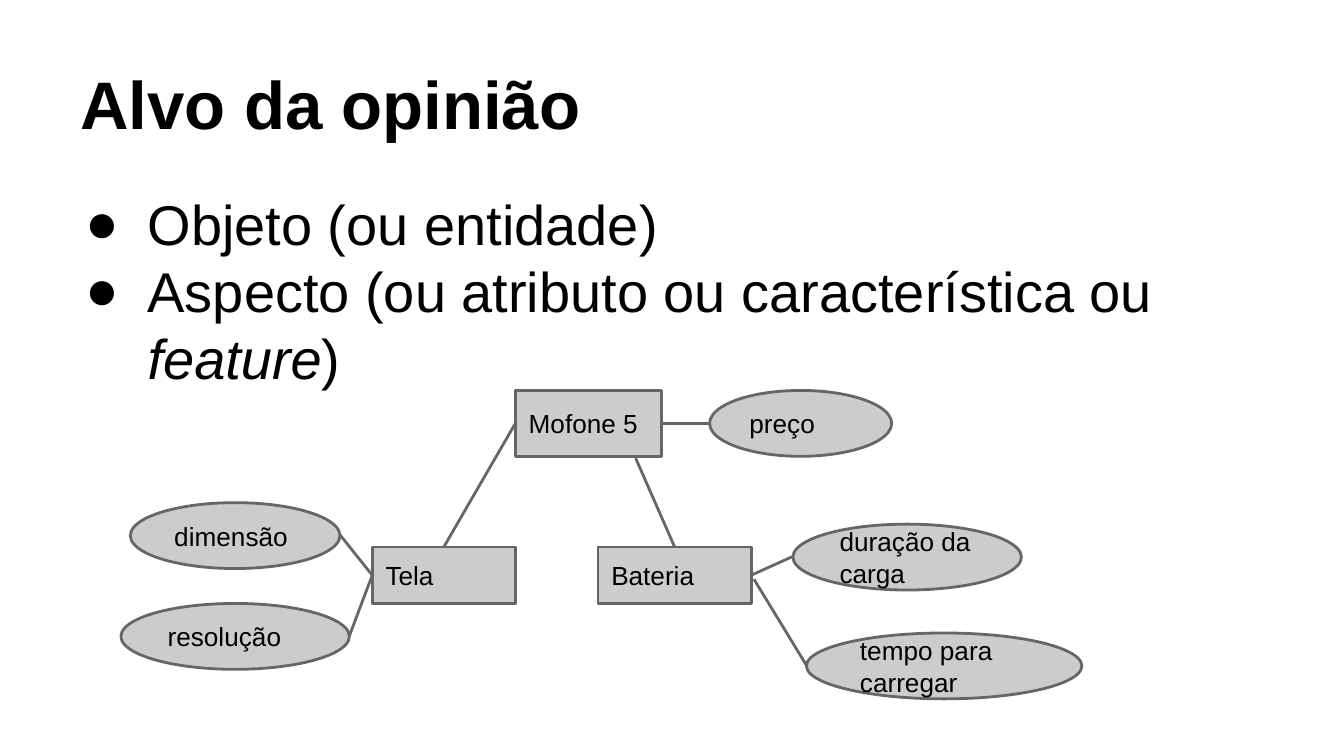
from lxml import etree
from pptx import Presentation
from pptx.dml.color import RGBColor
from pptx.enum import shapes, text
from pptx.oxml import ns
from pptx.util import Inches, Pt

theme = dict(font="Arial", ink="000000", fill="CCCCCC", edge="666666",
             title=36, body=30, node=14, stroke=1.5)

deck = Presentation()
deck.slide_width = Inches(10)
deck.slide_height = deck.slide_width * 9 // 16
slide = deck.slides.add_slide(deck.slide_layouts[6])
col, row = deck.slide_width / 100, deck.slide_height / 56.25


def grid(x, y):
    return round(x * col), round(y * row)


def write(frame, paragraphs, size, bold=False, anchor=text.MSO_ANCHOR.MIDDLE,
          bullet=None):
    frame.word_wrap = True
    frame.vertical_anchor = anchor
    frame.margin_left = frame.margin_right = round(col)
    frame.margin_top = frame.margin_bottom = round(row)
    for number, pieces in enumerate(paragraphs):
        paragraph = frame.add_paragraph() if number else frame.paragraphs[0]
        if bullet:
            props = paragraph._p.get_or_add_pPr()
            props.set("marL", str(round(5 * col)))
            props.set("indent", str(round(-4.6 * col)))
            color = etree.SubElement(props, ns.qn("a:buClr"))
            etree.SubElement(color, ns.qn("a:srgbClr"), val=theme["ink"])
            etree.SubElement(props, ns.qn("a:buFont"), typeface=theme["font"])
            etree.SubElement(props, ns.qn("a:buChar"), char=bullet)
        paragraph.alignment = text.PP_ALIGN.LEFT
        for words, italic in pieces:
            run = paragraph.add_run()
            run.text = words
            run.font.name, run.font.size = theme["font"], Pt(size)
            run.font.bold, run.font.italic = bold, italic
            run.font.color.rgb = RGBColor.from_string(theme["ink"])


heading = slide.shapes.add_textbox(*grid(5, 2.25), *grid(90, 9.4))
write(heading.text_frame, [[("Alvo da opinião", False)]], theme["title"],
      bold=True, anchor=text.MSO_ANCHOR.BOTTOM)

definitions = slide.shapes.add_textbox(*grid(5, 13.1), *grid(87.9, 40.7))
write(definitions.text_frame, [
    [("Objeto (ou entidade)", False)],
    [("Aspecto (ou atributo ou característica ou ", False),
     ("feature", True), (")", False)],
], theme["body"], anchor=text.MSO_ANCHOR.TOP, bullet="●")

box, oval = shapes.MSO_SHAPE.RECTANGLE, shapes.MSO_SHAPE.OVAL
concepts = {}
for label, kind, x, y, width, height in [
    ("Mofone 5", box, 38.35, 29.05, 10.9, 4.9),
    ("Tela", box, 27.7, 40.7, 10.65, 4.2),
    ("Bateria", box, 44.5, 40.7, 11.4, 4.2),
    ("dimensão", oval, 9.7, 37.4, 15.6, 4.9),
    ("resolução", oval, 9, 44.9, 17, 4.9),
    ("duração da carga", oval, 59, 39, 17, 4.9),
    ("tempo para carregar", oval, 60, 47.1, 20.5, 4.9),
    ("preço", oval, 52.8, 29.05, 13.55, 4.9),
]:
    concept = slide.shapes.add_shape(kind, *grid(x, y), *grid(width, height))
    concept.shadow.inherit = False
    concept.fill.solid()
    concept.fill.fore_color.rgb = RGBColor.from_string(theme["fill"])
    concept.line.color.rgb = RGBColor.from_string(theme["edge"])
    concept.line.width = Pt(theme["stroke"])
    write(concept.text_frame, [[(label, False)]], theme["node"])
    concepts[label] = concept

for start, end, origin, target in [
    ((33, 40.7), (38.35, 31.5), ("Tela", 0), ("Mofone 5", 1)),
    ((47.3, 34.1), (50.2, 40.7), None, ("Bateria", 0)),
    ((59, 41.4), (55.9, 42.8), None, ("Bateria", 3)),
    ((60, 49.5), (56.1, 43.1), None, None),
    ((26, 47.3), (27.7, 42.8), None, ("Tela", 1)),
    ((25.3, 39.8), (27.7, 42.8), None, ("Tela", 1)),
    ((49.25, 31.5), (52.8, 31.5), ("Mofone 5", 3), None),
]:
    relation = slide.shapes.add_connector(
        shapes.MSO_CONNECTOR.STRAIGHT, *grid(*start), *grid(*end))
    relation.line.color.rgb = RGBColor.from_string(theme["edge"])
    relation.line.width = Pt(theme["stroke"])
    etree.SubElement(relation._element.spPr, ns.qn("a:effectLst"))
    if origin:
        relation.begin_connect(concepts[origin[0]], origin[1])
    if target:
        relation.end_connect(concepts[target[0]], target[1])

deck.save("out.pptx")
